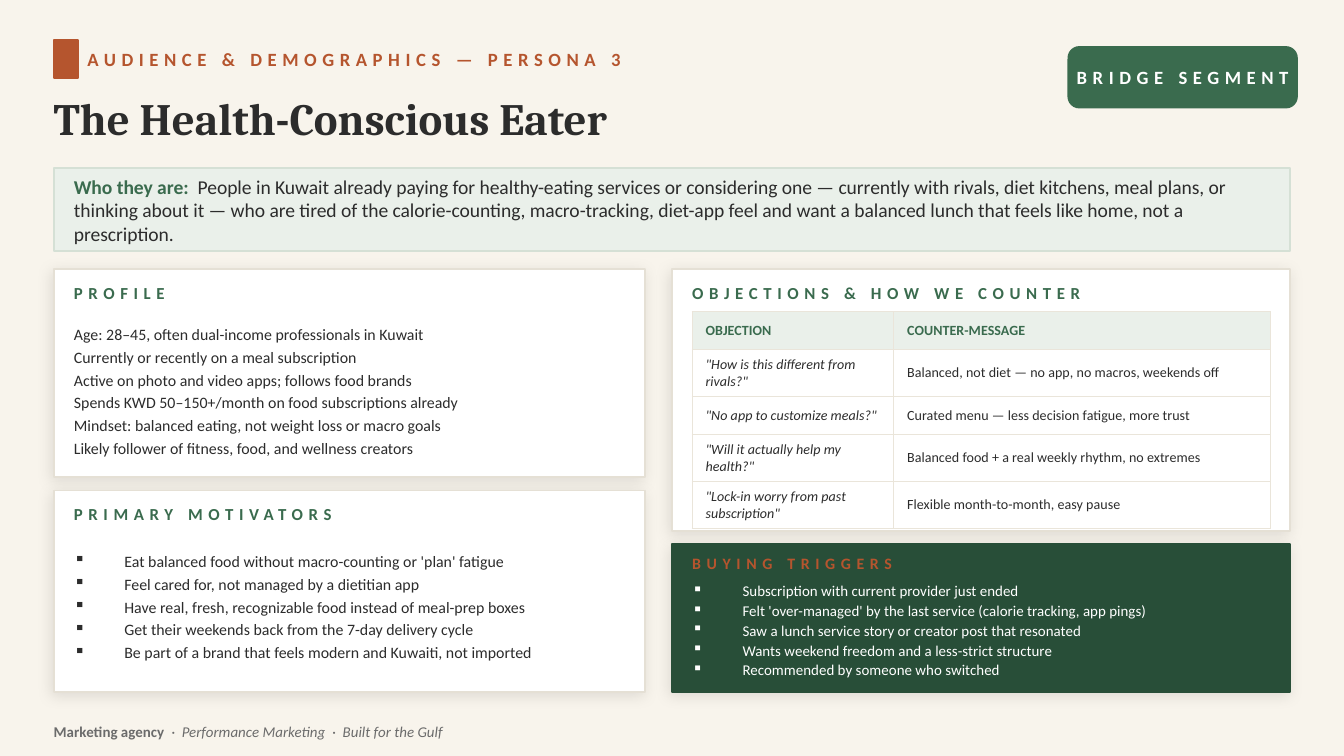
from dataclasses import dataclass
from typing import Optional

import lxml.etree
import pptx
import pptx.dml.color
import pptx.enum.shapes
import pptx.enum.text
import pptx.oxml.ns
import pptx.util

SLIDE_WIDTH = pptx.util.Inches(10)
SLIDE_HEIGHT = SLIDE_WIDTH * 9 // 16
COLUMNS, ROWS = 100, 56.25

CREAM, WHITE, INK, GREY = "F8F4EC", "FFFFFF", "2C2C2C", "6B6B6B"
RUST, GREEN, FOREST = "B5552E", "3A6B4E", "284E38"
MINT, MINT_EDGE, SAND, TABLE_EDGE = "EAF0EA", "D5E0D5", "E5E0D5", "EAE5DA"
PAD = 1.5


@dataclass(frozen=True)
class Area:
    col: float
    row: float
    cols: float
    rows: float

    def emu(self) -> tuple[int, int, int, int]:
        return across(self.col), down(self.row), across(self.cols), down(self.rows)


@dataclass(frozen=True)
class Style:
    size: float
    color: str
    bold: Optional[bool] = None
    italic: Optional[bool] = None
    tracking: float = 0
    face: str = "Calibri"


@dataclass(frozen=True)
class Card:
    area: Area
    fill: str
    edge: str
    title: str
    title_style: Style
    title_area: Area
    lines: tuple[str, ...] = ()
    line_style: Optional[Style] = None
    line_area: Optional[Area] = None
    gap: float = 2
    bulleted: bool = True


def across(cols: float) -> int:
    return round(SLIDE_WIDTH * cols / COLUMNS)


def down(rows: float) -> int:
    return round(SLIDE_HEIGHT * rows / ROWS)


def rgb(value: str) -> pptx.dml.color.RGBColor:
    return pptx.dml.color.RGBColor.from_string(value)


def add_xml(parent, tag: str, **attributes: str):
    return lxml.etree.SubElement(parent, pptx.oxml.ns.qn(tag), attributes)


def set_font(font, style: Style) -> None:
    font.name = style.face
    font.size = pptx.util.Pt(style.size)
    font.bold = style.bold
    font.italic = style.italic
    font.color.rgb = rgb(style.color)


def add_run(paragraph, words: str, style: Style):
    run = paragraph.add_run()
    run.text = words
    if style.tracking:
        run.font._element.set("spc", str(round(style.tracking * 100)))
    return run


def write(frame, lines: tuple[str, ...], style: Style, gap: float = 0,
          bulleted: bool = False, pad: float = 0) -> None:
    frame.word_wrap = True
    frame.vertical_anchor = pptx.enum.text.MSO_ANCHOR.MIDDLE
    frame.margin_left = frame.margin_right = across(pad)
    frame.margin_top = frame.margin_bottom = 0
    for index, words in enumerate(lines):
        paragraph = frame.add_paragraph() if index else frame.paragraphs[0]
        paragraph.alignment = pptx.enum.text.PP_ALIGN.LEFT
        if bulleted:
            properties = paragraph._p.get_or_add_pPr()
            properties.set("marL", str(across(3.75)))
            properties.set("indent", str(-across(3.75)))
            add_xml(properties, "a:buChar", char="▪")
        if gap:
            paragraph.space_after = pptx.util.Pt(gap)
        set_font(paragraph.font, style)
        add_run(paragraph, words, style)


def write_mixed(frame, parts: tuple[tuple[str, Style], ...], pad: float = 0) -> None:
    write(frame, (), parts[0][1], pad=pad)
    paragraph = frame.paragraphs[0]
    paragraph.alignment = pptx.enum.text.PP_ALIGN.LEFT
    for words, style in parts:
        set_font(add_run(paragraph, words, style).font, style)


def add_text(slide, area: Area):
    return slide.shapes.add_textbox(*area.emu()).text_frame


def add_block(slide, area: Area, fill: str, edge: str, rounding: float = 0, shaded: bool = False):
    kinds = pptx.enum.shapes.MSO_SHAPE
    block = slide.shapes.add_shape(
        kinds.ROUNDED_RECTANGLE if rounding else kinds.RECTANGLE, *area.emu())
    if rounding:
        block.adjustments[0] = rounding
    block.fill.solid()
    block.fill.fore_color.rgb = rgb(fill)
    block.line.color.rgb = rgb(edge)
    block.line.width = pptx.util.Pt(1)
    block.shadow.inherit = False
    if shaded:
        effects = block._element.spPr.find(pptx.oxml.ns.qn("a:effectLst"))
        shadow = add_xml(effects, "a:outerShdw", blurRad=str(pptx.util.Pt(8)),
                         dist=str(pptx.util.Pt(2)), dir=str(135 * 60000),
                         algn="bl", rotWithShape="0")
        add_xml(add_xml(shadow, "a:srgbClr", val="000000"), "a:alpha", val="10000")
    return block


def add_card(slide, card: Card) -> None:
    add_block(slide, card.area, card.fill, card.edge, shaded=True)
    write(add_text(slide, card.title_area), (card.title,), card.title_style)
    if card.lines:
        write(add_text(slide, card.line_area), card.lines, card.line_style,
              card.gap, card.bulleted)


def add_objections(slide, area: Area, widths: tuple[float, ...],
                   entries: tuple[tuple[str, str], ...]) -> None:
    table = slide.shapes.add_table(len(entries), len(widths), *area.emu()).table
    table.first_row = table.horz_banding = False
    for column, width in zip(table.columns, widths):
        column.width = across(width)
    for r, entry in enumerate(entries):
        table.rows[r].height = down(2.8)
        for c, words in enumerate(entry):
            cell = table.cell(r, c)
            cell.vertical_anchor = pptx.enum.text.MSO_ANCHOR.MIDDLE
            properties = cell._tc.get_or_add_tcPr()
            for side in ("a:lnL", "a:lnR", "a:lnT", "a:lnB"):
                border = add_xml(properties, side, w=str(pptx.util.Pt(0.5)))
                add_xml(add_xml(border, "a:solidFill"), "a:srgbClr", val=TABLE_EDGE)
            cell.fill.solid()
            cell.fill.fore_color.rgb = rgb(WHITE if r else MINT)
            paragraph = cell.text_frame.paragraphs[0]
            style = Style(7.5, INK, italic=c == 0) if r else Style(7.5, GREEN, bold=True)
            set_font(paragraph.font, style)
            add_run(paragraph, words, style)


HEADING = Style(9, GREEN, bold=True, tracking=3)
BODY = Style(8.5, INK)
LEFT, RIGHT = 4, 50

CARDS = (
    Card(Area(LEFT, 20, 44, 15.5), WHITE, SAND, "PROFILE", HEADING,
         Area(LEFT + PAD, 20.5, 40, 2.5), (
             "Age: 28–45, often dual-income professionals in Kuwait",
             "Currently or recently on a meal subscription",
             "Active on photo and video apps; follows food brands",
             "Spends KWD 50–150+/month on food subscriptions already",
             "Mindset: balanced eating, not weight loss or macro goals",
             "Likely follower of fitness, food, and wellness creators",
         ), BODY, Area(LEFT + PAD, 23, 41.5, 12.2), bulleted=False),
    Card(Area(LEFT, 36.5, 44, 15), WHITE, SAND, "PRIMARY MOTIVATORS", HEADING,
         Area(LEFT + PAD, 37, 40, 2.5), (
             "Eat balanced food without macro-counting or 'plan' fatigue",
             "Feel cared for, not managed by a dietitian app",
             "Have real, fresh, recognizable food instead of meal-prep boxes",
             "Get their weekends back from the 7-day delivery cycle",
             "Be part of a brand that feels modern and Kuwaiti, not imported",
         ), BODY, Area(LEFT + PAD, 39.3, 41.5, 11.7)),
    Card(Area(RIGHT, 20, 46, 19.5), WHITE, SAND, "OBJECTIONS & HOW WE COUNTER", HEADING,
         Area(RIGHT + PAD, 20.5, 43, 2.5)),
    Card(Area(RIGHT, 40.5, 46, 11), FOREST, FOREST, "BUYING TRIGGERS",
         Style(8.5, RUST, bold=True, tracking=3), Area(RIGHT + PAD, 40.8, 43, 2.2), (
             "Subscription with current provider just ended",
             "Felt 'over-managed' by the last service (calorie tracking, app pings)",
             "Saw a lunch service story or creator post that resonated",
             "Wants weekend freedom and a less-strict structure",
             "Recommended by someone who switched",
         ), Style(8, WHITE), Area(RIGHT + PAD, 42.8, 43, 8.2), gap=1),
)

OBJECTIONS = (
    ("OBJECTION", "COUNTER-MESSAGE"),
    ('"How is this different from rivals?"', "Balanced, not diet — no app, no macros, weekends off"),
    ('"No app to customize meals?"', "Curated menu — less decision fatigue, more trust"),
    ('"Will it actually help my health?"', "Balanced food + a real weekly rhythm, no extremes"),
    ('"Lock-in worry from past subscription"', "Flexible month-to-month, easy pause"),
)

WHO_THEY_ARE = (
    ("Who they are:  ", Style(10.5, GREEN, bold=True)),
    ("People in Kuwait already paying for healthy-eating services or considering one — "
     "currently with rivals, diet kitchens, meal plans, or thinking about it — who are tired "
     "of the calorie-counting, macro-tracking, diet-app feel and want a balanced lunch that "
     "feels like home, not a prescription.", Style(10.5, INK)),
)

FOOTER = (
    ("Marketing agency", Style(8, GREY, bold=True)),
    ("  ·  Performance Marketing  ·  Built for the Gulf", Style(8, GREY, italic=True)),
)


def main() -> None:
    deck = pptx.Presentation()
    deck.slide_width, deck.slide_height = SLIDE_WIDTH, SLIDE_HEIGHT
    slide = deck.slides.add_slide(deck.slide_layouts[6])
    slide.background.fill.solid()
    slide.background.fill.fore_color.rgb = rgb(CREAM)

    add_block(slide, Area(LEFT, 3, 1.8, 2.8), RUST, RUST)
    write(add_text(slide, Area(6.5, 2.8, 70, 3.2)), ("AUDIENCE & DEMOGRAPHICS — PERSONA 3",),
          Style(10, RUST, bold=True, tracking=3))
    write(add_text(slide, Area(LEFT, 6, 70, 5.5)), ("The Health-Conscious Eater",),
          Style(24, INK, bold=True, face="Cambria"))
    badge = add_block(slide, Area(79.5, 3.5, 17, 4.5), GREEN, GREEN, rounding=0.18).text_frame
    write(badge, ("BRIDGE SEGMENT",), Style(10, WHITE, bold=True, tracking=3))
    badge.paragraphs[0].alignment = pptx.enum.text.PP_ALIGN.CENTER
    summary = add_block(slide, Area(LEFT, 12.5, 92, 6.2), MINT, MINT_EDGE)
    write_mixed(summary.text_frame, WHO_THEY_ARE, pad=PAD)

    *upper_cards, triggers = CARDS
    for card in upper_cards:
        add_card(slide, card)
    add_objections(slide, Area(RIGHT + PAD, 23.2, 43, 14), (15, 28), OBJECTIONS)
    add_card(slide, triggers)
    write_mixed(add_text(slide, Area(LEFT, 53.2, 92, 2.5)), FOOTER)
    deck.save("out.pptx")


if __name__ == "__main__":
    main()
